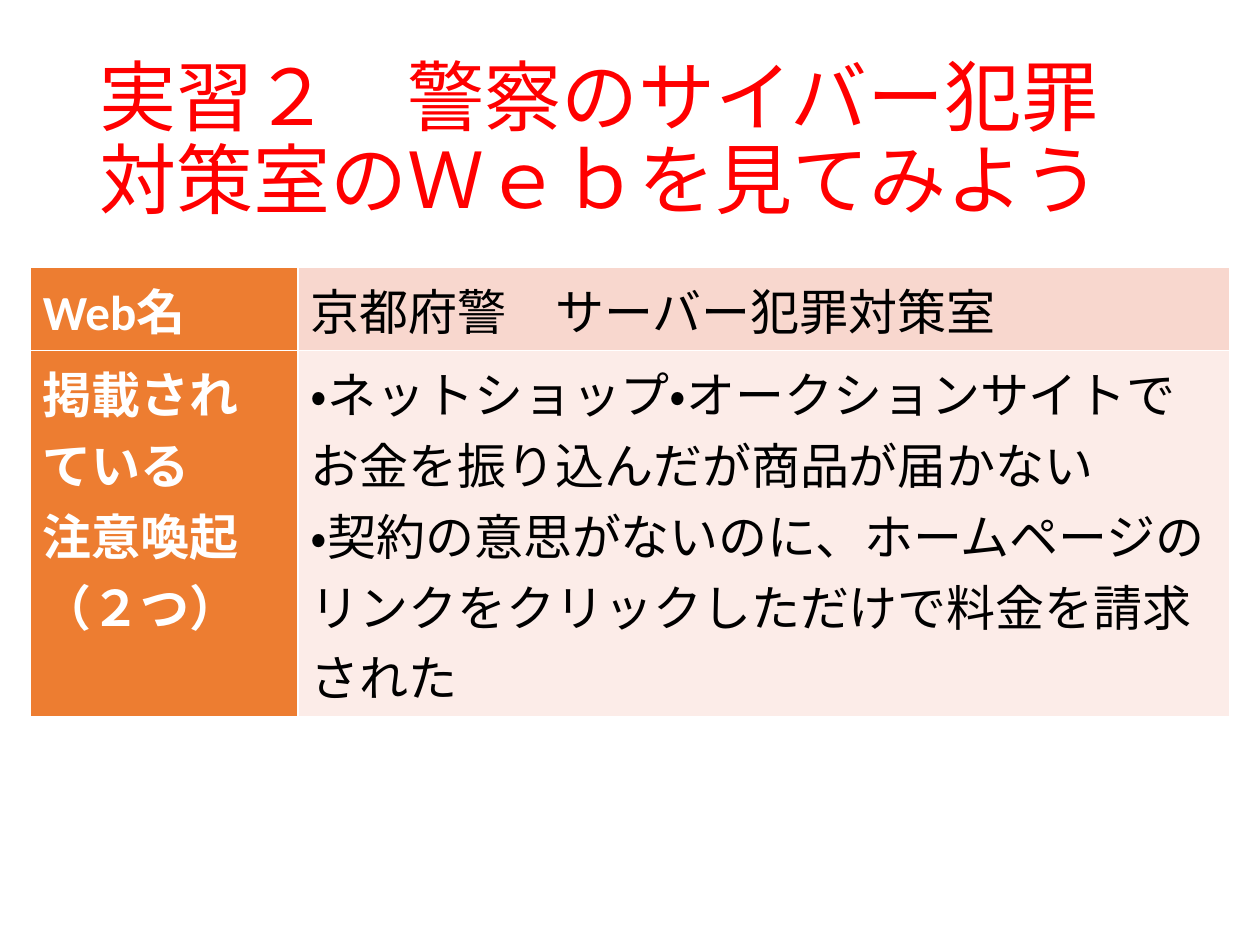
from dataclasses import dataclass
from lxml.etree import SubElement
from pptx import Presentation
from pptx.dml.color import RGBColor
from pptx.enum.lang import MSO_LANGUAGE_ID as Lang
from pptx.enum.text import MSO_ANCHOR as Anchor
from pptx.oxml.ns import qn
from pptx.util import Cm, Pt

RED = RGBColor(0xFF, 0x00, 0x00)
WHITE = RGBColor(0xFF, 0xFF, 0xFF)
BLACK = RGBColor(0x00, 0x00, 0x00)
ORANGE = RGBColor(0xED, 0x7D, 0x31)
PEACH = RGBColor(0xF8, 0xD7, 0xCE)
PALE = RGBColor(0xFC, 0xEC, 0xE8)
FONT = "Calibri"


@dataclass
class Row:
    head: str
    body: str
    fill: RGBColor
    height: float


ROWS = [
    Row("Web名", "京都府警　サーバー犯罪対策室", PEACH, 1.68),
    Row(
        "掲載されている\n注意喚起\n（２つ）",
        "・ネットショップ・オークションサイトでお金を振り込んだが商品が届かない\n"
        "・契約の意思がないのに、ホームページのリンクをクリックしただけで料金を請求された",
        PALE,
        7.38,
    ),
]


def style(frame, size: float, color: RGBColor, bold: bool = False) -> None:
    for para in frame.paragraphs:
        for run in para.runs:
            font = run.font
            font.name, font.size, font.bold = FONT, Pt(size), bold
            font.color.rgb = color
            font.language_id = Lang.JAPANESE


def border(cell, color: RGBColor, width: float) -> None:
    props = cell._tc.get_or_add_tcPr()
    for spot, side in enumerate(("a:lnL", "a:lnR", "a:lnT", "a:lnB")):
        line = SubElement(props, qn(side), w=str(Pt(width)))
        fill = SubElement(line, qn("a:solidFill"))
        SubElement(fill, qn("a:srgbClr"), val=str(color))
        props.insert(spot, line)


def fill_cell(cell, text: str, back: RGBColor, color: RGBColor, bold: bool) -> None:
    cell.text_frame.text = text
    style(cell.text_frame, 28, color, bold)
    cell.fill.solid()
    cell.fill.fore_color.rgb = back
    border(cell, WHITE, 1)


deck = Presentation()
deck.slide_width, deck.slide_height = Cm(25.4), Cm(19.05)
slide = deck.slides.add_slide(deck.slide_layouts[6])

# Title
title = slide.shapes.add_textbox(Cm(1.75), Cm(1.03), Cm(21.9), Cm(3.68)).text_frame
title.word_wrap = True
title.vertical_anchor = Anchor.MIDDLE
title.text = "実習２　警察のサイバー犯罪対策室のＷｅｂを見てみよう"
title.paragraphs[0].line_spacing = 0.9
style(title, 44, RED)

# Table: rows tall enough for their text
total = sum(row.height for row in ROWS)
frame = slide.shapes.add_table(len(ROWS), 2, Cm(0.61), Cm(5.39), Cm(24.19), Cm(total))
table = frame.table
table.first_row = table.horz_banding = False
for col, width in zip(table.columns, (5.4, 18.79)):
    col.width = Cm(width)
for num, row in enumerate(ROWS):
    table.rows[num].height = Cm(row.height)
    fill_cell(table.cell(num, 0), row.head, ORANGE, WHITE, True)
    fill_cell(table.cell(num, 1), row.body, row.fill, BLACK, False)

deck.save("out.pptx")
